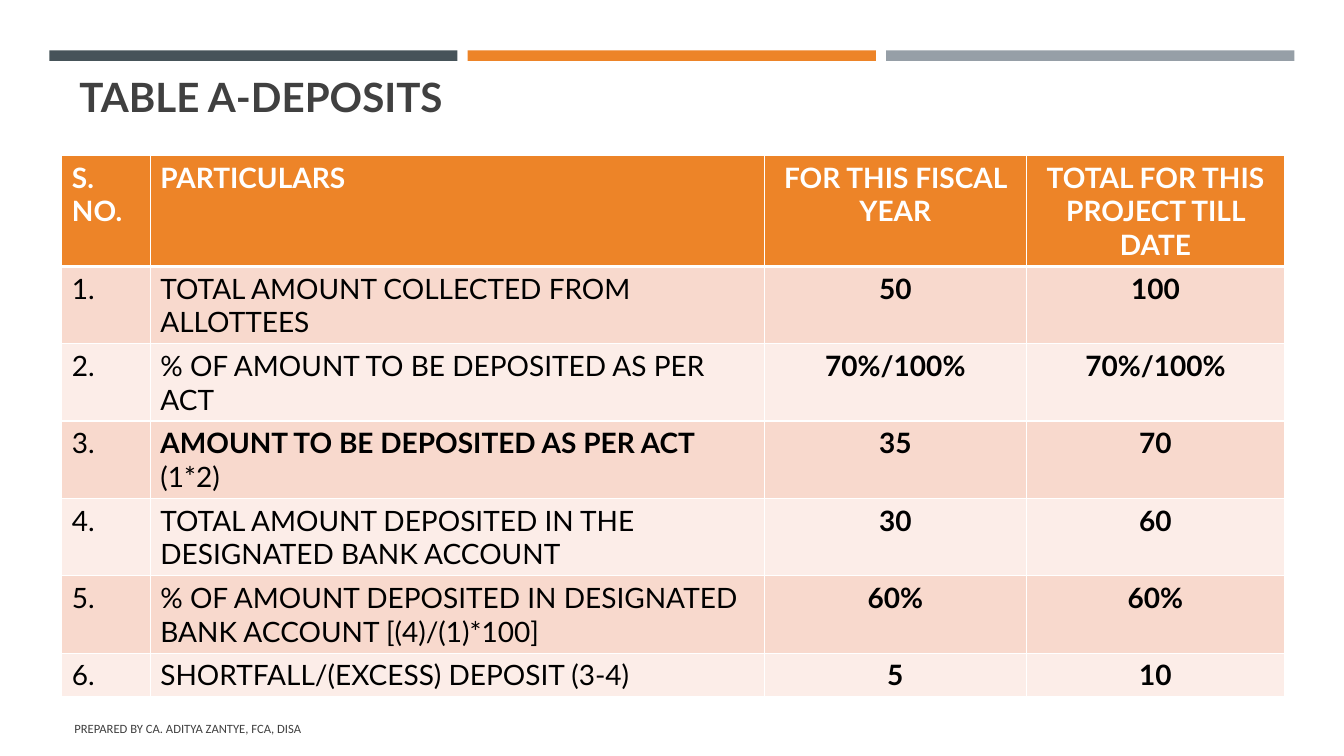
from lxml.etree import SubElement
from pptx import Presentation
from pptx.dml.color import RGBColor
from pptx.enum.shapes import MSO_SHAPE
from pptx.enum.text import MSO_ANCHOR, PP_ALIGN
from pptx.oxml.ns import qn
from pptx.util import Pt

COLORS = {
    "slate": "465359", "orange": "ED8428", "gray": "969FA7",
    "heading": "404040", "body": "000000", "white": "FFFFFF",
    "band_dark": "F8D9CD", "band_light": "FCEDE8",
}
HEADERS = ["S. NO.", "PARTICULARS", "FOR THIS FISCAL YEAR",
           "TOTAL FOR THIS PROJECT TILL DATE"]
# Particulars are (text, bold) runs; row numbers follow from the order.
DEPOSITS = [
    ([("TOTAL AMOUNT COLLECTED FROM ALLOTTEES", False)], "50", "100"),
    ([("% OF AMOUNT TO BE DEPOSITED AS PER ACT", False)], "70%/100%", "70%/100%"),
    ([("AMOUNT TO BE DEPOSITED AS PER ACT ", True), ("(1*2)", False)], "35", "70"),
    ([("TOTAL AMOUNT DEPOSITED IN THE DESIGNATED BANK ACCOUNT", False)], "30", "60"),
    ([("% OF AMOUNT DEPOSITED IN DESIGNATED BANK ACCOUNT [(4)/(1)*100]", False)],
     "60%", "60%"),
    ([("SHORTFALL/(EXCESS) DEPOSIT (3-4)", False)], "5", "10"),
]
COLUMN_WIDTHS = [63.2, 438.6, 187.2, 184.4]
ROW_HEIGHTS = [79.2] + [55.2] * 5 + [31.2]


def rgb(name):
    return RGBColor.from_string(COLORS[name])


def add_text(paragraph, text, *, size=20, font="Lato", color="body", bold=False,
             align=PP_ALIGN.LEFT):
    paragraph.alignment = align
    run = paragraph.add_run()
    run.text = text
    run.font.size = Pt(size)
    run.font.name = font
    run.font.bold = bold
    run.font.color.rgb = rgb(color)


def set_borders(cell, **widths):
    """Draw white borders; widths in points are keyed L, R, T and B."""
    properties = cell._tc.get_or_add_tcPr()
    for side in "LRTB":
        line = SubElement(properties, qn(f"a:ln{side}"), w=str(Pt(widths.get(side, 1))))
        fill = SubElement(line, qn("a:solidFill"))
        SubElement(fill, qn("a:srgbClr"), val=COLORS["white"])


class SlideBuilder:
    def __init__(self, slide):
        self.slide = slide

    def bar(self, left, top, width, height, color):
        shape = self.slide.shapes.add_shape(
            MSO_SHAPE.RECTANGLE, Pt(left), Pt(top), Pt(width), Pt(height))
        shape.shadow.inherit = False
        shape.fill.solid()
        shape.fill.fore_color.rgb = rgb(color)
        shape.line.fill.background()

    def text_box(self, left, top, width, height, text, anchor, **style):
        shape = self.slide.shapes.add_textbox(Pt(left), Pt(top), Pt(width), Pt(height))
        frame = shape.text_frame
        frame.word_wrap = True
        frame.vertical_anchor = anchor
        add_text(frame.paragraphs[0], text, **style)

    def table(self, left, top, column_widths, row_heights, rows):
        """Rows hold cells, and each cell is a list of (text, bold) runs."""
        table = self.slide.shapes.add_table(
            len(row_heights), len(column_widths), Pt(left), Pt(top),
            Pt(sum(column_widths)), Pt(sum(row_heights))).table
        for column, width in zip(table.columns, column_widths):
            column.width = Pt(width)
        for row, height in zip(table.rows, row_heights):
            row.height = Pt(height)
        for row_index, cells in enumerate(rows):
            for column_index, runs in enumerate(cells):
                self.fill_cell(table.cell(row_index, column_index),
                               row_index, column_index, runs)

    def fill_cell(self, cell, row_index, column_index, runs):
        is_header = row_index == 0
        set_borders(cell, B=3 if is_header else 1, T=3 if row_index == 1 else 1)
        band = "band_dark" if row_index % 2 else "band_light"
        cell.fill.solid()
        cell.fill.fore_color.rgb = rgb("orange" if is_header else band)
        for text, bold in runs:
            add_text(cell.text_frame.paragraphs[0], text, bold=bold,
                     color="white" if is_header else "body",
                     align=PP_ALIGN.CENTER if column_index > 1 else PP_ALIGN.LEFT)


def main():
    presentation = Presentation()
    presentation.slide_width = Pt(960)
    presentation.slide_height = Pt(540)
    builder = SlideBuilder(presentation.slides.add_slide(presentation.slide_layouts[6]))

    for index, color in enumerate(["slate", "orange", "gray"]):
        builder.bar(35.2 + 298.9 * index, 36, 291.6, 7.5, color)
    builder.text_box(49.7, 49, 868, 41, "TABLE A-DEPOSITS", MSO_ANCHOR.BOTTOM,
                     size=28.8, color="heading", bold=True)

    rows = [[[(header, True)] for header in HEADERS]]
    for number, (particulars, this_year, till_date) in enumerate(DEPOSITS, start=1):
        rows.append([[(f"{number}.", False)], particulars,
                     [(this_year, True)], [(till_date, True)]])
    builder.table(44.2, 111, COLUMN_WIDTHS, ROW_HEIGHTS, rows)

    builder.text_box(46, 506, 544, 29, "PREPARED BY CA. ADITYA ZANTYE, FCA, DISA",
                     MSO_ANCHOR.MIDDLE, size=9, font="Calibri", color="heading")
    presentation.save("out.pptx")


if __name__ == "__main__":
    main()
